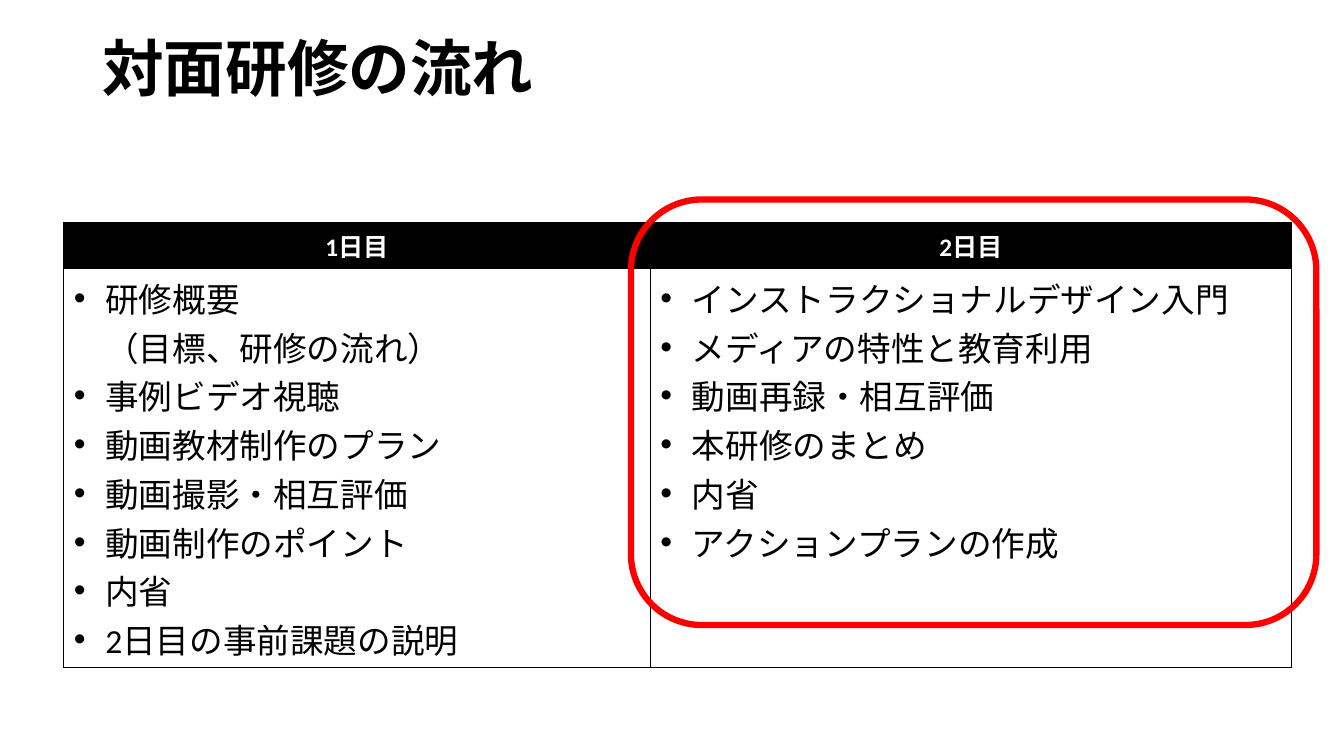
"""Build the slide showing the flow of the two-day face-to-face training."""
from dataclasses import dataclass

from lxml import etree
from pptx import Presentation
from pptx.dml.color import RGBColor
from pptx.enum.lang import MSO_LANGUAGE_ID
from pptx.enum.shapes import MSO_SHAPE
from pptx.enum.text import MSO_ANCHOR, PP_ALIGN
from pptx.oxml.ns import qn
from pptx.util import Pt

ROUNDED = MSO_SHAPE.ROUNDED_RECTANGLE
MIDDLE = MSO_ANCHOR.MIDDLE
CENTER = PP_ALIGN.CENTER
JAPANESE = MSO_LANGUAGE_ID.JAPANESE

BLACK = RGBColor(0, 0, 0)
WHITE = RGBColor(255, 255, 255)
RED = RGBColor(255, 0, 0)

JAPANESE_FONT = "Noto Sans CJK JP"
TITLE_FORMAT = {"name": JAPANESE_FONT, "size": Pt(44), "bold": True, "color": BLACK}
HEADER_FORMAT = {"name": "Calibri", "size": Pt(18), "bold": True, "color": WHITE}
ITEM_FORMAT = {"name": "Calibri", "size": Pt(24), "bold": False, "color": BLACK}

HEADER_HEIGHT = Pt(33)
BODY_HEIGHT = Pt(285)
BULLET_INDENT = Pt(22.5)
BORDER_WIDTH = Pt(1)


@dataclass(frozen=True)
class Day:
    """One column of the schedule."""

    heading: str
    width: Pt
    items: tuple[str, ...]


DAYS = (
    Day("1日目", Pt(419), (
        "研修概要\v（目標、研修の流れ）",
        "事例ビデオ視聴",
        "動画教材制作のプラン",
        "動画撮影・相互評価",
        "動画制作のポイント",
        "内省",
        "2日目の事前課題の説明",
    )),
    Day("2日目", Pt(458), (
        "インストラクショナルデザイン入門",
        "メディアの特性と教育利用",
        "動画再録・相互評価",
        "本研修のまとめ",
        "内省",
        "アクションプランの作成",
    )),
)


def write(para, text: str, style: dict) -> None:
    """Fill a paragraph and format each of its spans."""
    para.text = text
    for span in para.runs:
        span.font.language_id = JAPANESE
        for name, value in style.items():
            if name == "color":
                span.font.color.rgb = value
            else:
                setattr(span.font, name, value)
        latin = span.font._element.find(qn("a:latin"))
        latin.addnext(etree.Element(qn("a:ea"), typeface=JAPANESE_FONT))


def add_bullet(para) -> None:
    """Give a paragraph a hanging round bullet."""
    properties = para._p.get_or_add_pPr()
    properties.set("marL", str(BULLET_INDENT))
    properties.set("indent", str(-BULLET_INDENT))
    etree.SubElement(properties, qn("a:buFont"), typeface="Arial")
    etree.SubElement(properties, qn("a:buChar"), char="•")


def add_borders(cell) -> None:
    """Draw a black line on all four sides of a cell."""
    properties = cell._tc.get_or_add_tcPr()
    for index, side in enumerate(("lnL", "lnR", "lnT", "lnB")):
        line = etree.Element(qn(f"a:{side}"), w=str(BORDER_WIDTH))
        fill = etree.SubElement(line, qn("a:solidFill"))
        etree.SubElement(fill, qn("a:srgbClr"), val=str(BLACK))
        properties.insert(index, line)


def add_title(page, text: str) -> None:
    """Place the slide title."""
    box = page.shapes.add_textbox(Pt(66), Pt(16), Pt(828), Pt(70.5))
    frame = box.text_frame
    frame.word_wrap = True
    frame.vertical_anchor = MIDDLE
    frame.paragraphs[0].line_spacing = 0.9
    write(frame.paragraphs[0], text, TITLE_FORMAT)


def add_schedule(page, days: tuple[Day, ...]) -> None:
    """Place the table with one column per day."""
    width = sum(day.width for day in days)
    table = page.shapes.add_table(
        2, len(days), Pt(45.5), Pt(158.7), width, HEADER_HEIGHT + BODY_HEIGHT
    ).table
    table.first_row = False
    table.horz_banding = False
    table.rows[0].height = HEADER_HEIGHT
    table.rows[1].height = BODY_HEIGHT
    for column, day in enumerate(days):
        table.columns[column].width = day.width
        header, body = table.cell(0, column), table.cell(1, column)
        header.fill.solid()
        header.fill.fore_color.rgb = BLACK
        body.fill.background()
        heading = header.text_frame.paragraphs[0]
        heading.alignment = CENTER
        write(heading, day.heading, HEADER_FORMAT)
        frame = body.text_frame
        for index, item in enumerate(day.items):
            para = frame.add_paragraph() if index else frame.paragraphs[0]
            write(para, item, ITEM_FORMAT)
            add_bullet(para)
        for cell in (header, body):
            add_borders(cell)


def add_highlight(page) -> None:
    """Ring the second day in red."""
    ring = page.shapes.add_shape(ROUNDED, Pt(450.7), Pt(142.5), Pt(489.6), Pt(304))
    ring.shadow.inherit = False
    ring.fill.background()
    ring.line.color.rgb = RED
    ring.line.width = Pt(4.5)


def main() -> None:
    """Create and save the deck."""
    deck = Presentation()
    deck.slide_width, deck.slide_height = Pt(960), Pt(540)
    page = deck.slides.add_slide(deck.slide_layouts[6])
    add_title(page, "対面研修の流れ")
    add_schedule(page, DAYS)
    add_highlight(page)
    deck.save("out.pptx")


if __name__ == "__main__":
    main()
